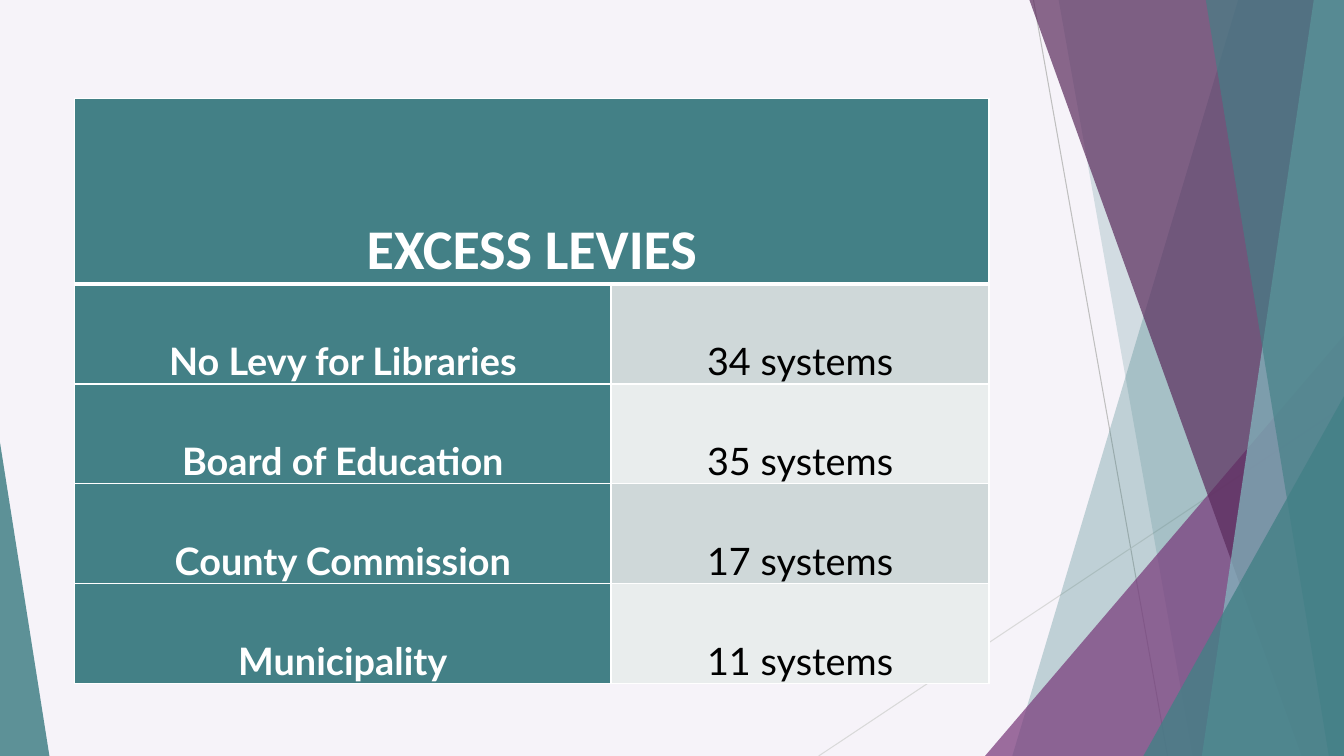
from dataclasses import dataclass

from lxml import etree
from pptx import Presentation
from pptx.dml.color import RGBColor
from pptx.enum.shapes import MSO_CONNECTOR, MSO_SHAPE
from pptx.enum.text import MSO_ANCHOR, PP_ALIGN
from pptx.oxml.ns import qn
from pptx.util import Inches, Pt

STRAIGHT = MSO_CONNECTOR.STRAIGHT
TRIANGLE = MSO_SHAPE.ISOSCELES_TRIANGLE
BOTTOM = MSO_ANCHOR.BOTTOM
CENTER = PP_ALIGN.CENTER

HEADING = "EXCESS LEVIES"
LEVIES = [
    ("No Levy for Libraries", "34 systems"),
    ("Board of Education", "35 systems"),
    ("County Commission", "17 systems"),
    ("Municipality", "11 systems"),
]


@dataclass(frozen=True)
class Theme:
    background: str = "F6F3F9"
    teal: str = "438086"
    light_teal: str = "83BCC1"
    purple: str = "78397A"
    plum: str = "5A2B5C"
    white: str = "FFFFFF"
    black: str = "000000"
    bands: tuple = ("CFD8D9", "E9EDED")
    heading_font: str = "Calibri"
    body_font: str = "Lato"
    heading_size: int = 40
    body_size: int = 27


THEME = Theme()
WIDTH, HEIGHT = 13.33, 7.5

# Line: start, end, colour
LINES = [
    ((10.25, 0), (11.58, HEIGHT), "BFBFBF"),
    ((WIDTH, 4.03), (8.12, HEIGHT), "D9D9D9"),
]
# Band: left edge at the top, left edge at the bottom, colour, opacity in percent
# Triangle: left, top, width, apex position, colour, opacity in percent
DECOR = [
    ("band", 12.28, 10.04, THEME.teal, 30),
    ("band", 10.5, 11.83, THEME.teal, 20),
    ("triangle", 9.77, 3.33, 3.56, 1, THEME.purple, 72),
    ("band", 10.21, 12.91, THEME.plum, 70),
    ("band", 13.03, 11.92, THEME.light_teal, 70),
    ("band", 11.96, 13.18, THEME.teal, 65),
    ("triangle", 11.34, 3.93, 1.99, 1, THEME.teal, 80),
    ("triangle", 0, 4.39, 0.49, 0, THEME.teal, 85),
]

TABLE_LEFT, TABLE_TOP = 0.74, 0.98
COLUMNS = (5.32, 3.75)
HEADING_HEIGHT, ROW_HEIGHT = 1.84, 0.99


def rgb(color):
    return RGBColor.from_string(color)


def paint(shape, color, opacity):
    shape.shadow.inherit = False
    shape.line.fill.background()
    shape.fill.solid()
    shape.fill.fore_color.rgb = rgb(color)
    clr = shape.fill._xPr.find(qn("a:solidFill"))[0]
    etree.SubElement(clr, qn("a:alpha"), val=str(opacity * 1000))


def add_line(s, start, end, color):
    line = s.shapes.add_connector(STRAIGHT, *map(Inches, start + end))
    line.line.color.rgb = rgb(color)
    line.line.width = Pt(0.75)
    etree.SubElement(line._element.spPr, qn("a:effectLst"))


def add_band(s, top_x, bottom_x, color, opacity):
    """Add a full-height panel that reaches the right edge of the slide."""
    builder = s.shapes.build_freeform(Inches(top_x), 0)
    corners = [(WIDTH, 0), (WIDTH, HEIGHT), (bottom_x, HEIGHT)]
    builder.add_line_segments([(Inches(x), Inches(y)) for x, y in corners])
    paint(builder.convert_to_shape(), color, opacity)


def add_triangle(s, left, top, width, apex, color, opacity):
    """Add a triangle that stands on the bottom edge of the slide."""
    shape = s.shapes.add_shape(
        TRIANGLE, Inches(left), Inches(top), Inches(width), Inches(HEIGHT - top))
    shape.adjustments[0] = apex
    paint(shape, color, opacity)


def set_borders(cell, top, bottom):
    """Draw white borders: 1 pt at the sides, the given points above and below."""
    tc_pr = cell._tc.get_or_add_tcPr()
    for i, (side, points) in enumerate(zip("LRTB", (1, 1, top, bottom))):
        ln = etree.Element(qn(f"a:ln{side}"), w=str(Pt(points)))
        fill = etree.SubElement(ln, qn("a:solidFill"))
        etree.SubElement(fill, qn("a:srgbClr"), val=THEME.white)
        tc_pr.insert(i, ln)


def fill_cell(cell, text, fill, color, font, size, bold):
    cell.fill.solid()
    cell.fill.fore_color.rgb = rgb(fill)
    cell.vertical_anchor = BOTTOM
    cell.margin_left = cell.margin_right = Inches(0.18)
    cell.margin_top = cell.margin_bottom = 0
    cell.text_frame.text = text
    p = cell.text_frame.paragraphs[0]
    p.alignment = CENTER
    p.line_spacing = 1.07
    p.space_after = Pt(8)
    for r in p.runs:
        r.font.name = font
        r.font.size = Pt(size)
        r.font.bold = bold
        r.font.color.rgb = rgb(color)


def add_levy_table(s):
    heights = [HEADING_HEIGHT] + [ROW_HEIGHT] * len(LEVIES)
    table = s.shapes.add_table(
        len(heights), len(COLUMNS), Inches(TABLE_LEFT), Inches(TABLE_TOP),
        Inches(sum(COLUMNS)), Inches(sum(heights))).table
    for column, width in zip(table.columns, COLUMNS):
        column.width = Inches(width)
    for row, height in zip(table.rows, heights):
        row.height = Inches(height)

    heading = table.cell(0, 0)
    heading.merge(table.cell(0, 1))
    fill_cell(heading, HEADING, THEME.teal, THEME.white,
              THEME.heading_font, THEME.heading_size, True)
    for i, (source, count) in enumerate(LEVIES):
        body = (THEME.body_font, THEME.body_size)
        fill_cell(table.cell(i + 1, 0), source, THEME.teal, THEME.white, *body, True)
        fill_cell(table.cell(i + 1, 1), count, THEME.bands[i % 2], THEME.black, *body, False)
    for i, row in enumerate(table.rows):
        for cell in row.cells:
            set_borders(cell, top=3 if i == 1 else 1, bottom=3 if i == 0 else 1)


def main():
    prs = Presentation()
    prs.slide_width, prs.slide_height = Inches(WIDTH), Inches(HEIGHT)
    s = prs.slides.add_slide(prs.slide_layouts.get_by_name("Blank"))
    s.background.fill.solid()
    s.background.fill.fore_color.rgb = rgb(THEME.background)
    for line in LINES:
        add_line(s, *line)
    draw = {"band": add_band, "triangle": add_triangle}
    for kind, *values in DECOR:
        draw[kind](s, *values)
    add_levy_table(s)
    prs.save("out.pptx")


if __name__ == "__main__":
    main()
